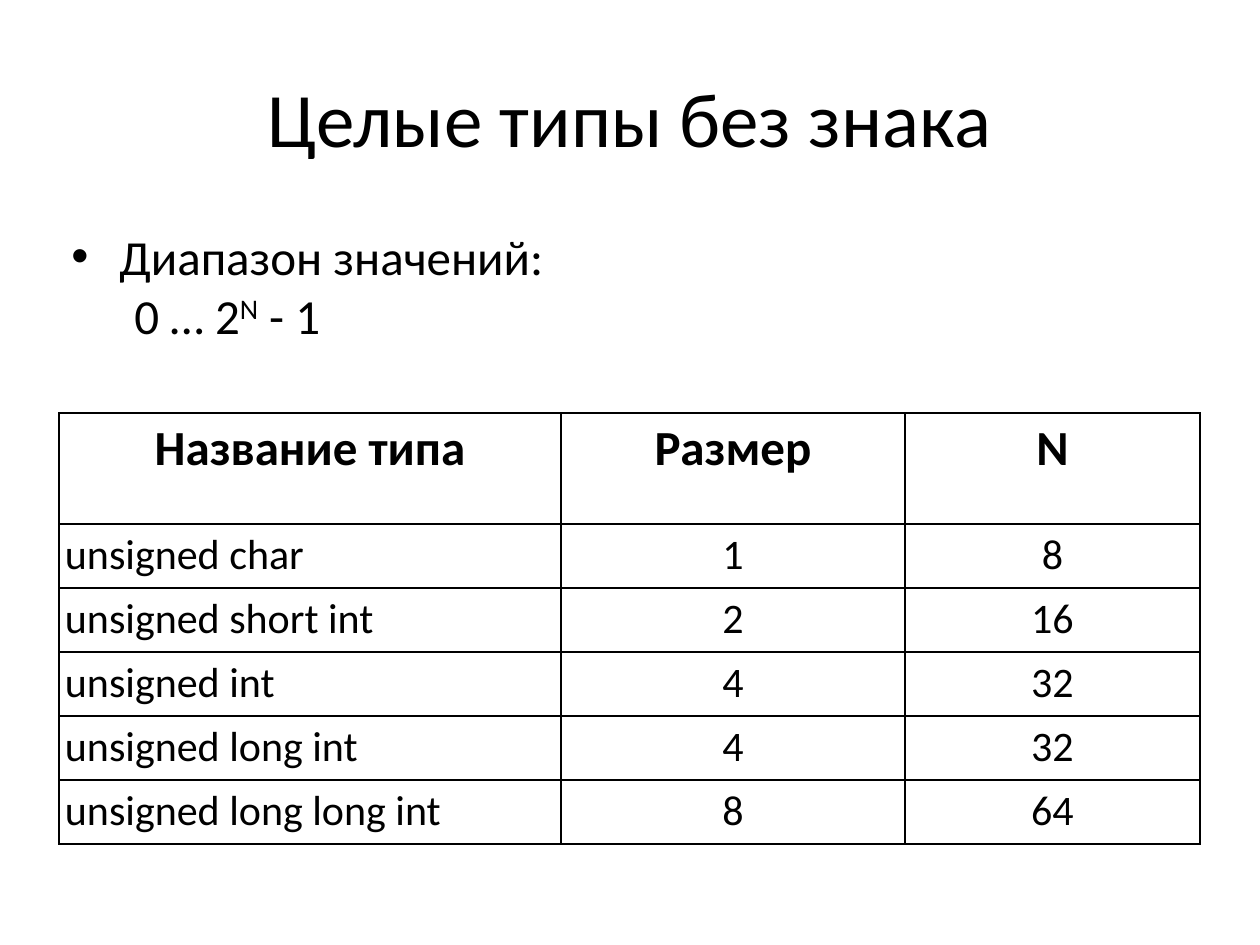
from lxml.etree import SubElement
from pptx import Presentation
from pptx.dml.color import RGBColor
from pptx.enum.text import MSO_ANCHOR, PP_ALIGN
from pptx.oxml.ns import qn
from pptx.util import Emu, Pt

PX = 914400 // 126
BLACK = RGBColor(0, 0, 0)
FONT = "Calibri"
COLUMN_WIDTHS = (502, 344, 295)
HEADER_HEIGHT, ROW_HEIGHT = 111, 64
INTEGER_TYPES = (
    ("Название типа", "Размер", "N"),
    ("unsigned char", "1", "8"),
    ("unsigned short int", "2", "16"),
    ("unsigned int", "4", "32"),
    ("unsigned long int", "4", "32"),
    ("unsigned long long int", "8", "64"),
)


def px(length):
    """Turn whole pixels into EMU."""
    return Emu(length * PX)


def style(paragraph, size, bold=False):
    """Set the common font of a paragraph."""
    font = paragraph.font
    font.name, font.size, font.bold = FONT, Pt(size), bold
    font.color.rgb = BLACK


def add_frame(slide, box):
    """Add a wrapping text box and return its text frame."""
    frame = slide.shapes.add_textbox(*map(px, box)).text_frame
    frame.word_wrap = True
    return frame


def add_title(slide, box):
    """Place the centred heading."""
    frame = add_frame(slide, box)
    frame.vertical_anchor = MSO_ANCHOR.MIDDLE
    heading = frame.paragraphs[0]
    heading.text = "Целые типы без знака"
    heading.alignment = PP_ALIGN.CENTER
    style(heading, 44)


def add_range(slide, box):
    """Place the bulleted value range with its raised exponent."""
    value_range = add_frame(slide, box).paragraphs[0]
    value_range.add_run().text = "Диапазон значений:"
    value_range.add_line_break()
    value_range.add_run().text = "\t0 … 2"
    exponent = value_range.add_run()
    exponent.text = "N"
    exponent.font._element.set("baseline", "30000")
    value_range.add_run().text = " - 1"
    properties = value_range._p.get_or_add_pPr()
    properties.set("marL", str(px(48)))
    properties.set("indent", str(px(-48)))
    space_before = SubElement(properties, qn("a:spcBef"))
    SubElement(space_before, qn("a:spcPct"), val="20000")
    SubElement(properties, qn("a:buFont"), typeface="Arial")
    SubElement(properties, qn("a:buChar"), char="•")
    style(value_range, 28)


def add_borders(cell):
    """Draw a thin black line on each side of a cell."""
    properties = cell._tc.get_or_add_tcPr()
    for position, side in enumerate(("a:lnL", "a:lnR", "a:lnT", "a:lnB")):
        line = properties.makeelement(qn(side), {"w": str(Pt(1))})
        fill = SubElement(line, qn("a:solidFill"))
        SubElement(fill, qn("a:srgbClr"), val=str(BLACK))
        properties.insert(position, line)


def add_types_table(slide, box):
    """Place the table of unsigned integer types."""
    table = slide.shapes.add_table(
        len(INTEGER_TYPES), len(COLUMN_WIDTHS), *map(px, box)
    ).table
    table.first_row = table.horz_banding = False
    for column, width in zip(table.columns, COLUMN_WIDTHS):
        column.width = px(width)
    for row_index, values in enumerate(INTEGER_TYPES):
        header = row_index == 0
        table.rows[row_index].height = px(HEADER_HEIGHT if header else ROW_HEIGHT)
        for column_index, value in enumerate(values):
            cell = table.cell(row_index, column_index)
            cell.margin_left = cell.margin_right = px(6)
            cell.margin_top = cell.margin_bottom = px(6)
            cell.fill.background()
            add_borders(cell)
            entry = cell.text_frame.paragraphs[0]
            entry.text = value
            centred = header or column_index > 0
            entry.alignment = PP_ALIGN.CENTER if centred else PP_ALIGN.LEFT
            style(entry, 28 if header else 24, header)


def main():
    """Build and save the slide."""
    presentation = Presentation()
    presentation.slide_width, presentation.slide_height = px(1260), px(945)
    slide = presentation.slides.add_slide(presentation.slide_layouts[6])
    add_title(slide, (63, 38, 1134, 158))
    add_types_table(slide, (59, 413, 1141, 431))
    add_range(slide, (59, 220, 1138, 173))
    presentation.save("out.pptx")


if __name__ == "__main__":
    main()
